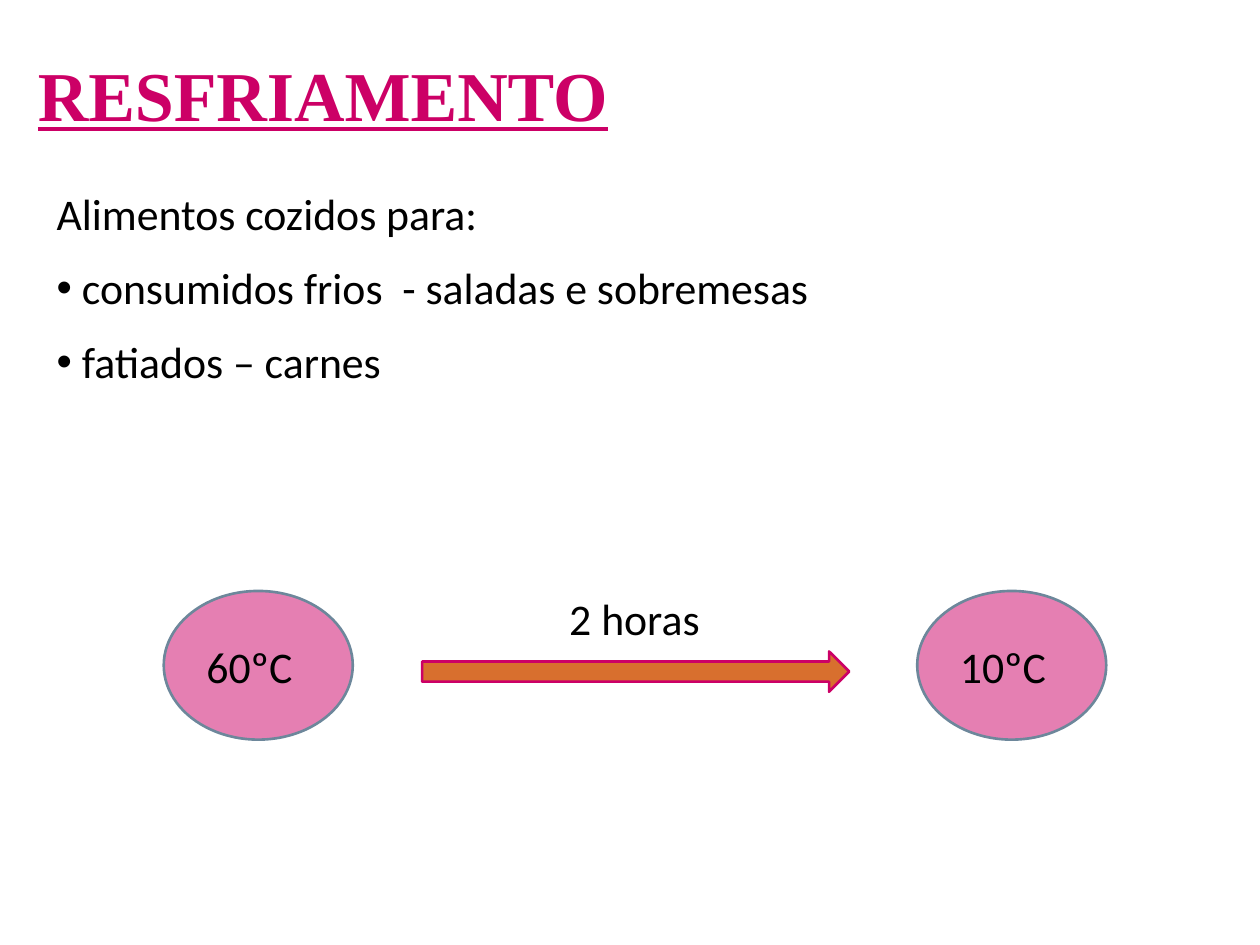
from dataclasses import dataclass

from lxml import etree
from pptx import Presentation
from pptx import util as u
from pptx.dml.color import RGBColor
from pptx.enum import shapes, text
from pptx.oxml import ns


@dataclass(frozen=True)
class Theme:
    """Colours, fonts and type sizes of the slide."""
    accent: RGBColor = RGBColor(0xCC, 0x00, 0x66)
    ink: RGBColor = RGBColor(0x00, 0x00, 0x00)
    arrow: RGBColor = RGBColor(0xD8, 0x6F, 0x2E)
    outline: RGBColor = RGBColor(0x6D, 0x87, 0x9B)
    title_font: str = "Times New Roman"
    body_font: str = "Calibri"
    title_size: u.Pt = u.Pt(40)
    body_size: u.Pt = u.Pt(25)
    line_width: u.Pt = u.Pt(1.5)


THEME = Theme()


def place(part, box):
    """Move a part to a box of left, top, width and height in inches."""
    part.left, part.top, part.width, part.height = map(u.Inches, box)


def prepare(frame):
    """Make a text frame wrap, start at the top and keep its size."""
    frame.word_wrap = True
    frame.auto_size = text.MSO_AUTO_SIZE.NONE
    frame.vertical_anchor = text.MSO_ANCHOR.TOP


def add_run(paragraph, wording, font=THEME.body_font, size=THEME.body_size, color=THEME.ink):
    """Add a formatted run and return it."""
    run = paragraph.add_run()
    run.text = wording
    run.font.name, run.font.size = font, size
    run.font.color.rgb = color
    return run


def set_bullet(paragraph, bullet, hang):
    """Set a hanging bullet, or none when bullet is empty."""
    props = paragraph._p.get_or_add_pPr()
    props.set("marL", str(u.Inches(hang)))
    props.set("indent", str(-u.Inches(hang)))
    if bullet:
        etree.SubElement(props, ns.qn("a:buFont")).set("typeface", "Arial")
        etree.SubElement(props, ns.qn("a:buChar")).set("char", bullet)
    else:
        etree.SubElement(props, ns.qn("a:buNone"))


def add_title(slide, box, wording):
    """Fill the title placeholder."""
    title = slide.shapes.title
    place(title, box)
    prepare(title.text_frame)
    heading = title.text_frame.paragraphs[0]
    heading.alignment = text.PP_ALIGN.LEFT
    run = add_run(heading, wording, THEME.title_font, THEME.title_size, THEME.accent)
    run.font.bold = run.font.underline = True


def add_foods(slide, box, intro, foods):
    """Fill the body placeholder with an introduction and its list."""
    body = slide.placeholders[1]
    place(body, box)
    frame = body.text_frame
    prepare(frame)
    items = [(intro, "", 0)] + [(food, "•", 0.2) for food in foods]
    for index, (wording, bullet, hang) in enumerate(items):
        paragraph = frame.add_paragraph() if index else frame.paragraphs[0]
        paragraph.alignment = text.PP_ALIGN.JUSTIFY
        paragraph.space_before = u.Pt(12.5)
        set_bullet(paragraph, bullet, hang)
        add_run(paragraph, wording)


def add_label(parent, box, wording, alignment):
    """Add a one-line label."""
    label = parent.shapes.add_textbox(*map(u.Inches, box))
    prepare(label.text_frame)
    paragraph = label.text_frame.paragraphs[0]
    paragraph.alignment = alignment
    add_run(paragraph, wording)


def add_outlined(parent, kind, box, fill, line):
    """Add a filled preset shape with an outline."""
    part = parent.shapes.add_shape(kind, *map(u.Inches, box))
    part.shadow.inherit = False
    part.fill.solid()
    part.fill.fore_color.rgb = fill
    part.line.color.rgb = line
    part.line.width = THEME.line_width
    return part


def add_temperature(slide, box, wording):
    """Group a translucent ellipse with its temperature."""
    left, top, _, _ = box
    group = slide.shapes.add_group_shape()
    ellipse = add_outlined(group, shapes.MSO_SHAPE.OVAL, box, THEME.accent, THEME.outline)
    color = ellipse._element.spPr.find(ns.qn("a:solidFill"))[0]
    etree.SubElement(color, ns.qn("a:alpha")).set("val", "50000")
    add_label(group, (left + 0.24, top + 0.34, 1.02, 0.52), wording, text.PP_ALIGN.LEFT)


def add_cooling(slide, box, start, duration, end):
    """Draw the cooling step from the start to the end temperature."""
    left, top, width, height = box
    oval_width = 1.5
    add_outlined(slide, shapes.MSO_SHAPE.RIGHT_ARROW,
                 (left + 2.05, top + 0.48, 3.39, 0.32), THEME.arrow, THEME.accent)
    add_label(slide, (left + 2.91, top - 0.04, 1.65, 0.52), duration, text.PP_ALIGN.CENTER)
    for offset, wording in ((0, start), (width - oval_width, end)):
        add_temperature(slide, (left + offset, top, oval_width, height), wording)


def main():
    """Build and save the slide."""
    deck = Presentation()
    deck.slide_width, deck.slide_height = u.Inches(10), u.Inches(7.5)
    slide = deck.slides.add_slide(deck.slide_layouts[1])
    add_foods(slide, (0.35, 1.43, 9.41, 3.68), "Alimentos cozidos para:",
              ["consumidos frios  - saladas e sobremesas", "fatiados – carnes"])
    add_title(slide, (0.2, 0.36, 9.8, 0.77), "RESFRIAMENTO")
    add_cooling(slide, (1.3, 4.69, 7.48, 1.18), "60ºC", "2 horas", "10ºC")
    deck.save("out.pptx")


if __name__ == "__main__":
    main()
